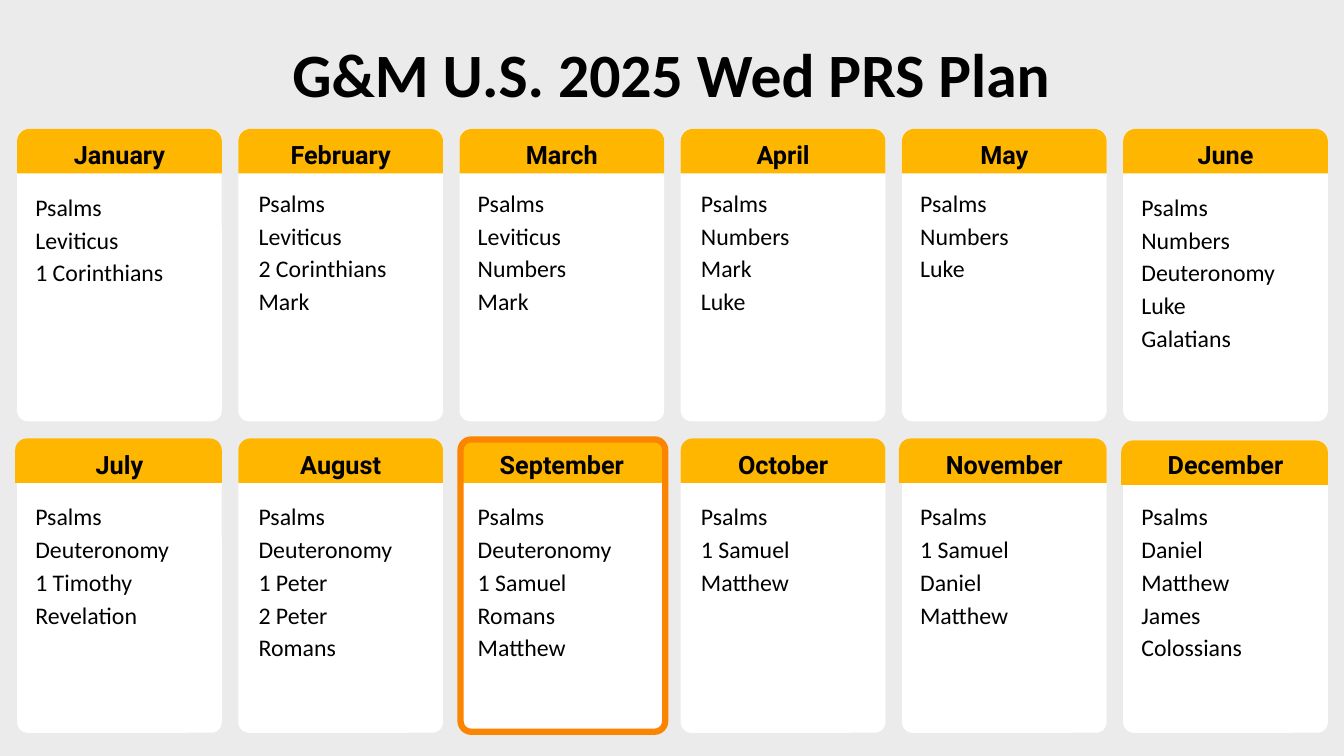
import pptx
import pptx.dml.color
import pptx.enum.shapes
import pptx.enum.text
import pptx.util

Inches, Pt = pptx.util.Inches, pptx.util.Pt
SHAPE = pptx.enum.shapes.MSO_SHAPE
ALIGN = pptx.enum.text.PP_ALIGN

WIDTH, HEIGHT = 13.33, 7.5
COLORS = {"page": "EBEBEB", "card": "FFFFFF", "header": "FFB600",
          "highlight": "FB8500", "text": "000000"}

# Calendar grid
COLUMNS = 6
LEFT, COLUMN_STEP = 0.17, 2.194
TOPS = (1.28, 4.37)
HEADER_TOPS = (1.28, 4.35)
LABEL_TOPS = (1.38, 4.46)
LIST_TOPS = (1.87, 4.98)
CARD_W, CARD_H, HEADER_H, LABEL_H = 2.03, 2.9, 0.44, 0.3
LIST_W, LINE_H = 2.02, 0.33
LIST_SHIFTS = (-0.02, 0, -0.02, 0, -0.02, -0.02)
CARD_ROUNDING, HEADER_ROUNDING = 0.052, 0.267

# Headers that reach a little left of their card, and lists that sit lower
HEADER_OVERHANG = {"July": 0.02, "November": 0.03, "December": 0.02}
HEADER_DROP = {"December": 0.02}
LIST_DROP = {"January": 0.04, "June": 0.04}
CURRENT_MONTH = "September"

TITLE_FONT = {"name": "Calibri", "size": Pt(44), "bold": True}
LABEL_FONT = {"name": "Roboto", "size": Pt(18), "bold": True}
LIST_FONT = {"name": "Calibri", "size": Pt(17), "bold": False}

PLAN = {
    "January": ["Psalms", "Leviticus", "1 Corinthians"],
    "February": ["Psalms", "Leviticus", "2 Corinthians", "Mark"],
    "March": ["Psalms", "Leviticus", "Numbers", "Mark"],
    "April": ["Psalms", "Numbers", "Mark", "Luke"],
    "May": ["Psalms", "Numbers", "Luke"],
    "June": ["Psalms", "Numbers", "Deuteronomy", "Luke", "Galatians"],
    "July": ["Psalms", "Deuteronomy", "1 Timothy", "Revelation"],
    "August": ["Psalms", "Deuteronomy", "1 Peter", "2 Peter", "Romans"],
    "September": ["Psalms", "Deuteronomy", "1 Samuel", "Romans", "Matthew"],
    "October": ["Psalms", "1 Samuel", "Matthew"],
    "November": ["Psalms", "1 Samuel", "Daniel", "Matthew"],
    "December": ["Psalms", "Daniel", "Matthew", "James", "Colossians"],
}


def rgb(name):
    return pptx.dml.color.RGBColor.from_string(COLORS[name])


def add_panel(s, kind, box, fill=None, line=None, rounding=None):
    sp = s.shapes.add_shape(kind, *map(Inches, box))
    sp.shadow.inherit = False
    if rounding is not None:
        sp.adjustments[0] = rounding
    if fill:
        sp.fill.solid()
        sp.fill.fore_color.rgb = rgb(fill)
    else:
        sp.fill.background()
    if line:
        sp.line.color.rgb = rgb(line)
        sp.line.width = Pt(4.5)
    else:
        sp.line.fill.background()


def add_text(s, box, lines, font, align=ALIGN.LEFT, indent=0, space_after=0):
    tf = s.shapes.add_textbox(*map(Inches, box)).text_frame
    frame = {"word_wrap": True, "margin_left": Inches(indent), "margin_top": 0,
             "margin_right": 0, "margin_bottom": 0,
             "auto_size": pptx.enum.text.MSO_AUTO_SIZE.SHAPE_TO_FIT_TEXT}
    for key, value in frame.items():
        setattr(tf, key, value)
    for i, line in enumerate(lines):
        p = tf.paragraphs[0] if i == 0 else tf.add_paragraph()
        p.alignment = align
        p.space_after = Pt(space_after)
        r = p.add_run()
        r.text = line
        for key, value in font.items():
            setattr(r.font, key, value)
        r.font.color.rgb = rgb("text")


def grid_cells():
    """Yield each month with its row, column and left edge."""
    for i, month in enumerate(PLAN):
        row, column = divmod(i, COLUMNS)
        yield month, row, column, LEFT + column * COLUMN_STEP


def add_cards(s):
    for _, row, _, x in grid_cells():
        add_panel(s, SHAPE.ROUNDED_RECTANGLE, (x, TOPS[row], CARD_W, CARD_H),
                  fill="card", rounding=CARD_ROUNDING)


def add_headers(s):
    for month, row, _, x in grid_cells():
        overhang = HEADER_OVERHANG.get(month, 0)
        y = HEADER_TOPS[row] + HEADER_DROP.get(month, 0)
        add_panel(s, SHAPE.ROUND_2_SAME_RECTANGLE,
                  (x - overhang, y, CARD_W + overhang, HEADER_H),
                  fill="header", rounding=HEADER_ROUNDING)
    for month, row, _, x in grid_cells():
        add_text(s, (x, LABEL_TOPS[row], CARD_W, LABEL_H), [month],
                 LABEL_FONT, ALIGN.CENTER)


def add_reading_lists(s):
    for month, row, column, x in grid_cells():
        books = PLAN[month]
        y = LIST_TOPS[row] + LIST_DROP.get(month, 0)
        add_text(s, (x + LIST_SHIFTS[column], y, LIST_W, LINE_H * len(books)),
                 books, LIST_FONT, indent=0.2, space_after=3)


def add_highlight(s):
    """Outline the card of the current month."""
    for month, row, _, x in grid_cells():
        if month == CURRENT_MONTH:
            add_panel(s, SHAPE.ROUNDED_RECTANGLE,
                      (x + 0.01, TOPS[row] - 0.01, CARD_W, CARD_H),
                      line="highlight", rounding=CARD_ROUNDING)


def main():
    prs = pptx.Presentation()
    prs.slide_width, prs.slide_height = Inches(WIDTH), Inches(HEIGHT)
    s = prs.slides.add_slide(prs.slide_layouts[6])
    add_panel(s, SHAPE.RECTANGLE, (0, 0, WIDTH, HEIGHT), fill="page")
    add_cards(s)
    add_headers(s)
    add_text(s, (0.25, 0.36, 12.82, 0.74), ["G&M U.S. 2025 Wed PRS Plan"],
             TITLE_FONT, ALIGN.CENTER)
    add_reading_lists(s)
    add_highlight(s)
    prs.save("out.pptx")


if __name__ == "__main__":
    main()
